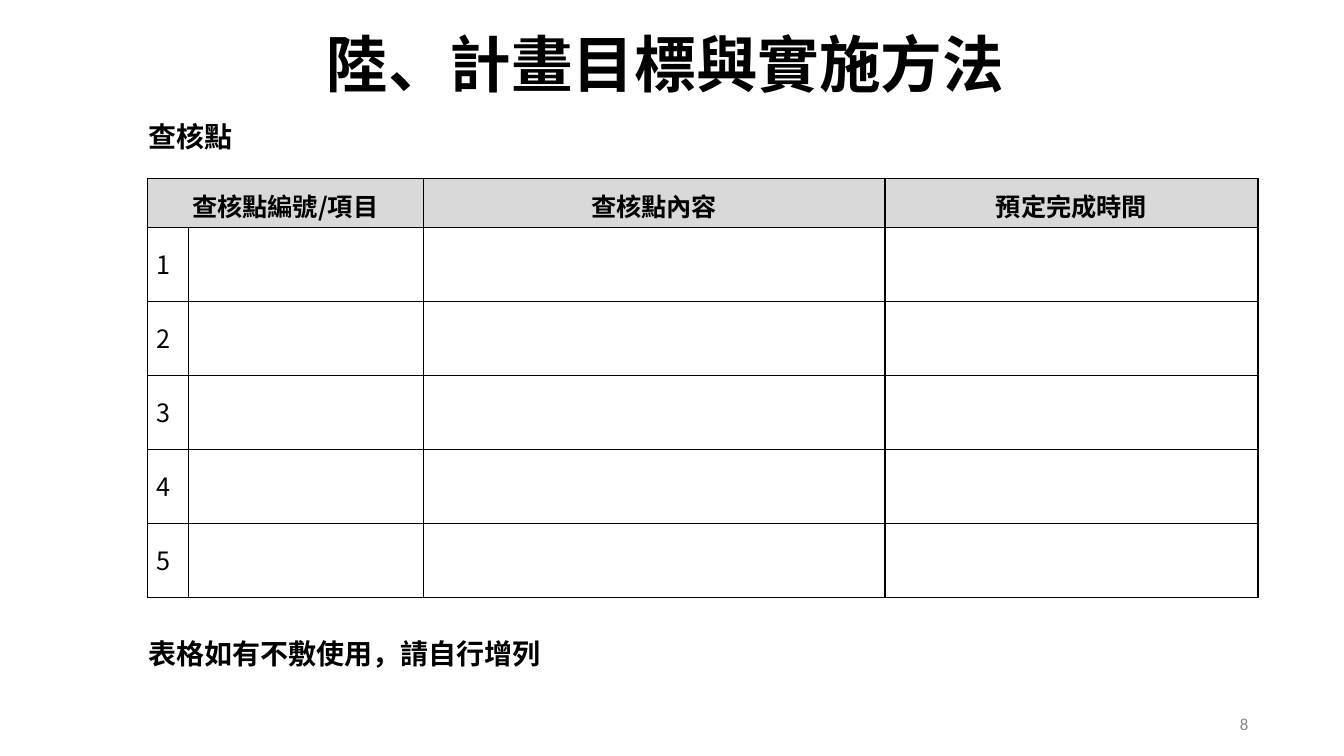
from dataclasses import dataclass

from lxml import etree
from pptx import Presentation
from pptx.dml.color import RGBColor
from pptx.enum.text import MSO_ANCHOR, MSO_AUTO_SIZE, PP_ALIGN
from pptx.oxml.ns import qn
from pptx.util import Inches, Length, Pt

CENTER = PP_ALIGN.CENTER
MIDDLE = MSO_ANCHOR.MIDDLE
TOP = MSO_ANCHOR.TOP
GROW = MSO_AUTO_SIZE.SHAPE_TO_FIT_TEXT

COLORS = {"ink": "000000", "header": "D9D9D9", "page": "888888"}
CJK_FONT = "Noto Sans CJK SC"
LATIN_FONT = "Calibri"

# The slide is a grid of square cells, ten to the inch.
GRID_COLUMNS, GRID_ROWS = 133.33, 75
LEFT_EDGE = 14.6

TABLE_TOP = 17.7
COLUMN_SPANS = (4.1, 23.3, 45.8, 37)
HEADER_SPAN, ROW_SPAN = 4.9, 7.34
HEADERS = {0: "查核點編號/項目", 2: "查核點內容", 3: "預定完成時間"}
CHECKPOINT_COUNT = 5


@dataclass(frozen=True)
class TextStyle:
    size: float
    font: str = CJK_FONT
    bold: bool = True
    color: str = "ink"


@dataclass(frozen=True)
class Label:
    text: str
    column: float
    row: float
    columns: float
    rows: float
    style: TextStyle


LABELS = (
    Label("8", 122.9, 70.7, 3.2, 1.7, TextStyle(12, LATIN_FONT, False, "page")),
    Label("查核點", LEFT_EDGE, 11.8, 17.4, 3.5, TextStyle(20)),
    Label("表格如有不敷使用，請自行增列", LEFT_EDGE, 63, 86.5, 3.5, TextStyle(20, LATIN_FONT)),
    Label("陸、計畫目標與實施方法", 32.3, 2.5, 82.5, 7.5, TextStyle(44)),
)
HEADER_STYLE = TextStyle(18)
NUMBER_STYLE = TextStyle(18, bold=False)


def grid(cells: float) -> Length:
    return Inches(cells / 10)


def write(paragraph, text: str, style: TextStyle) -> None:
    paragraph.text = text
    font = paragraph.font
    font.name = style.font
    font.size = Pt(style.size)
    font.bold = style.bold
    font.color.rgb = RGBColor.from_string(COLORS[style.color])
    properties = paragraph._p.pPr.find(qn("a:defRPr"))
    east_asian = etree.Element(qn("a:ea"), typeface=CJK_FONT)
    properties.find(qn("a:latin")).addnext(east_asian)


def add_label(slide, label: Label) -> None:
    shape = slide.shapes.add_textbox(
        grid(label.column), grid(label.row), grid(label.columns), grid(label.rows)
    )
    frame = shape.text_frame
    frame.word_wrap = True
    frame.auto_size = GROW
    frame.margin_left = Inches(0.01)
    frame.margin_top = Inches(0.01)
    frame.margin_right = frame.margin_bottom = 0
    write(frame.paragraphs[0], label.text, label.style)


def add_borders(cell) -> None:
    """Draw a one-point line on all four sides of the cell."""
    properties = cell._tc.get_or_add_tcPr()
    for position, side in enumerate(("lnL", "lnR", "lnT", "lnB")):
        line = etree.Element(qn(f"a:{side}"), w=str(Pt(1)))
        fill = etree.SubElement(line, qn("a:solidFill"))
        etree.SubElement(fill, qn("a:srgbClr"), val=COLORS["ink"])
        properties.insert(position, line)


def format_cell(cell, is_header: bool) -> None:
    cell.margin_right = cell.margin_bottom = 0
    cell.margin_left = 0 if is_header else Inches(0.09)
    cell.margin_top = Inches(0.09) if is_header else 0
    cell.vertical_anchor = TOP if is_header else MIDDLE
    if is_header:
        cell.fill.solid()
        cell.fill.fore_color.rgb = RGBColor.from_string(COLORS["header"])
    else:
        cell.fill.background()
    add_borders(cell)


def add_checkpoint_table(slide) -> None:
    row_spans = (HEADER_SPAN,) + (ROW_SPAN,) * CHECKPOINT_COUNT
    table = slide.shapes.add_table(
        len(row_spans), len(COLUMN_SPANS), grid(LEFT_EDGE), grid(TABLE_TOP),
        grid(sum(COLUMN_SPANS)), grid(sum(row_spans)),
    ).table
    table.first_row = table.horz_banding = False
    for column, span in zip(table.columns, COLUMN_SPANS):
        column.width = grid(span)
    for index, (row, span) in enumerate(zip(table.rows, row_spans)):
        row.height = grid(span)
        for cell in row.cells:
            format_cell(cell, is_header=index == 0)

    table.cell(0, 0).merge(table.cell(0, 1))
    for column, text in HEADERS.items():
        paragraph = table.cell(0, column).text_frame.paragraphs[0]
        paragraph.alignment = CENTER
        write(paragraph, text, HEADER_STYLE)
    for number in range(1, CHECKPOINT_COUNT + 1):
        paragraph = table.cell(number, 0).text_frame.paragraphs[0]
        paragraph.line_spacing = 0.9
        write(paragraph, str(number), NUMBER_STYLE)


def main() -> None:
    presentation = Presentation()
    presentation.slide_width = grid(GRID_COLUMNS)
    presentation.slide_height = grid(GRID_ROWS)
    slide = presentation.slides.add_slide(presentation.slide_layouts[6])
    add_checkpoint_table(slide)
    for label in LABELS:
        add_label(slide, label)
    presentation.save("out.pptx")


if __name__ == "__main__":
    main()
